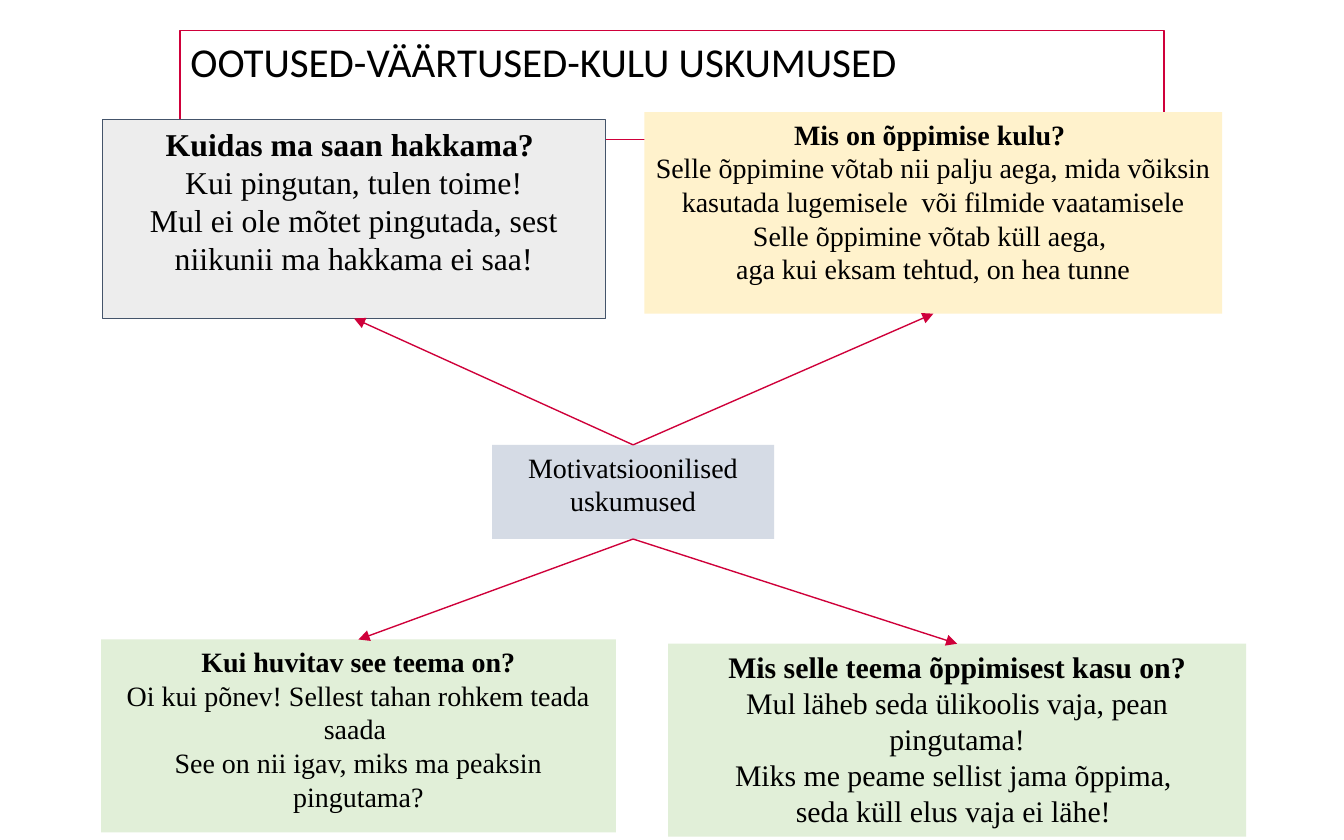
"""Builds a slide on expectancy, value and cost beliefs around motivation."""
from lxml import etree
from pptx import Presentation
from pptx import util as u
from pptx.dml.color import RGBColor
from pptx.enum import shapes, text
from pptx.oxml.ns import qn

BLACK = RGBColor(0x00, 0x00, 0x00)
CRIMSON = RGBColor(0xCF, 0x00, 0x3A)
SLATE = RGBColor(0x44, 0x54, 0x6A)
BLUE_GREY = RGBColor(0xD5, 0xDB, 0xE5)
GREY = RGBColor(0xED, 0xED, 0xED)
GREEN = RGBColor(0xE1, 0xEF, 0xD8)
CREAM = RGBColor(0xFF, 0xF2, 0xCC)
TOP, BOTTOM = 0, 2


def write(paragraph, content, size, font="Times New Roman", bold=False,
          align=text.PP_ALIGN.CENTER):
    paragraph.alignment = align
    run = paragraph.add_run()
    run.text = content
    run.font.name = font
    run.font.size = u.Pt(size)
    run.font.bold = bold
    run.font.color.rgb = BLACK


class SlideBuilder:
    def __init__(self, slide, line_width=0.75):
        self.slide = slide
        self.line_width = u.Pt(line_width)

    def outline(self, shape, color):
        shape.line.color.rgb = color
        shape.line.width = self.line_width

    def prepare_frame(self, shape, auto_size=text.MSO_AUTO_SIZE.NONE):
        frame = shape.text_frame
        frame.word_wrap = True
        frame.auto_size = auto_size
        frame.vertical_anchor = text.MSO_ANCHOR.TOP
        frame.margin_left = frame.margin_right = u.Cm(0.2)
        frame.margin_top = frame.margin_bottom = u.Cm(0.1)
        return frame

    def title(self, content, left, top, width, height):
        shape = self.slide.shapes.title
        shape.left, shape.top = u.Cm(left), u.Cm(top)
        shape.width, shape.height = u.Cm(width), u.Cm(height)
        self.outline(shape, CRIMSON)
        frame = self.prepare_frame(shape, text.MSO_AUTO_SIZE.SHAPE_TO_FIT_TEXT)
        write(frame.paragraphs[0], content, 22, font="Calibri",
              align=text.PP_ALIGN.LEFT)

    def box(self, place, fill, size, lines, heading=None, border=None):
        shape = self.slide.shapes.add_shape(
            shapes.MSO_SHAPE.RECTANGLE, *(u.Cm(length) for length in place))
        shape.shadow.inherit = False
        shape.fill.solid()
        shape.fill.fore_color.rgb = fill
        if border is None:
            shape.line.fill.background()
        else:
            self.outline(shape, border)
        frame = self.prepare_frame(shape)
        contents = [heading, *lines] if heading else lines
        for index, content in enumerate(contents):
            paragraph = frame.add_paragraph() if index else frame.paragraphs[0]
            write(paragraph, content, size, bold=content == heading)
        return shape

    def arrow(self, start, start_side, end, end_side):
        connector = self.slide.shapes.add_connector(
            shapes.MSO_CONNECTOR.STRAIGHT, 0, 0, 0, 0)
        connector.begin_connect(start, start_side)
        connector.end_connect(end, end_side)
        self.outline(connector, CRIMSON)
        line = connector.line._get_or_add_ln()
        etree.SubElement(line, qn("a:tailEnd"), type="triangle")
        etree.SubElement(connector._element.spPr, qn("a:effectLst"))


def main():
    presentation = Presentation()
    presentation.slide_width = u.Cm(25.4)
    presentation.slide_height = u.Cm(15.88)
    builder = SlideBuilder(
        presentation.slides.add_slide(presentation.slide_layouts[5]))

    builder.title("OOTUSED-VÄÄRTUSED-KULU USKUMUSED", 3.4, 0.58, 18.6, 1.15)
    center = builder.box((9.3, 8.41, 5.33, 1.78), BLUE_GREY, 15,
                         ["Motivatsioonilised", "uskumused"])
    coping = builder.box(
        (1.94, 2.26, 9.5, 3.76), GREY, 17,
        ["Kui pingutan, tulen toime!",
         "Mul ei ole mõtet pingutada, sest niikunii ma hakkama ei saa!"],
        heading="Kuidas ma saan hakkama? ", border=SLATE)
    interest = builder.box(
        (1.91, 12.09, 9.73, 3.65), GREEN, 15,
        ["Oi kui põnev! Sellest tahan rohkem teada saada ",
         "See on nii igav, miks ma peaksin pingutama?"],
        heading="Kui huvitav see teema on?")
    benefit = builder.box(
        (12.63, 12.17, 10.92, 3.65), GREEN, 16,
        ["Mul läheb seda ülikoolis vaja, pean pingutama!",
         "Miks me peame sellist jama õppima, ",
         "seda küll elus vaja ei lähe! "],
        heading="Mis selle teema õppimisest kasu on?")
    cost = builder.box(
        (12.18, 2.12, 10.92, 3.81), CREAM, 15,
        ["Selle õppimine võtab nii palju aega, mida võiksin kasutada "
         "lugemisele  või filmide vaatamisele",
         "Selle õppimine võtab küll aega, ",
         "aga kui eksam tehtud, on hea tunne"],
        heading="Mis on õppimise kulu? ")

    for belief in (cost, coping):
        builder.arrow(center, TOP, belief, BOTTOM)
    for belief in (benefit, interest):
        builder.arrow(center, BOTTOM, belief, TOP)
    presentation.save("out.pptx")


if __name__ == "__main__":
    main()
